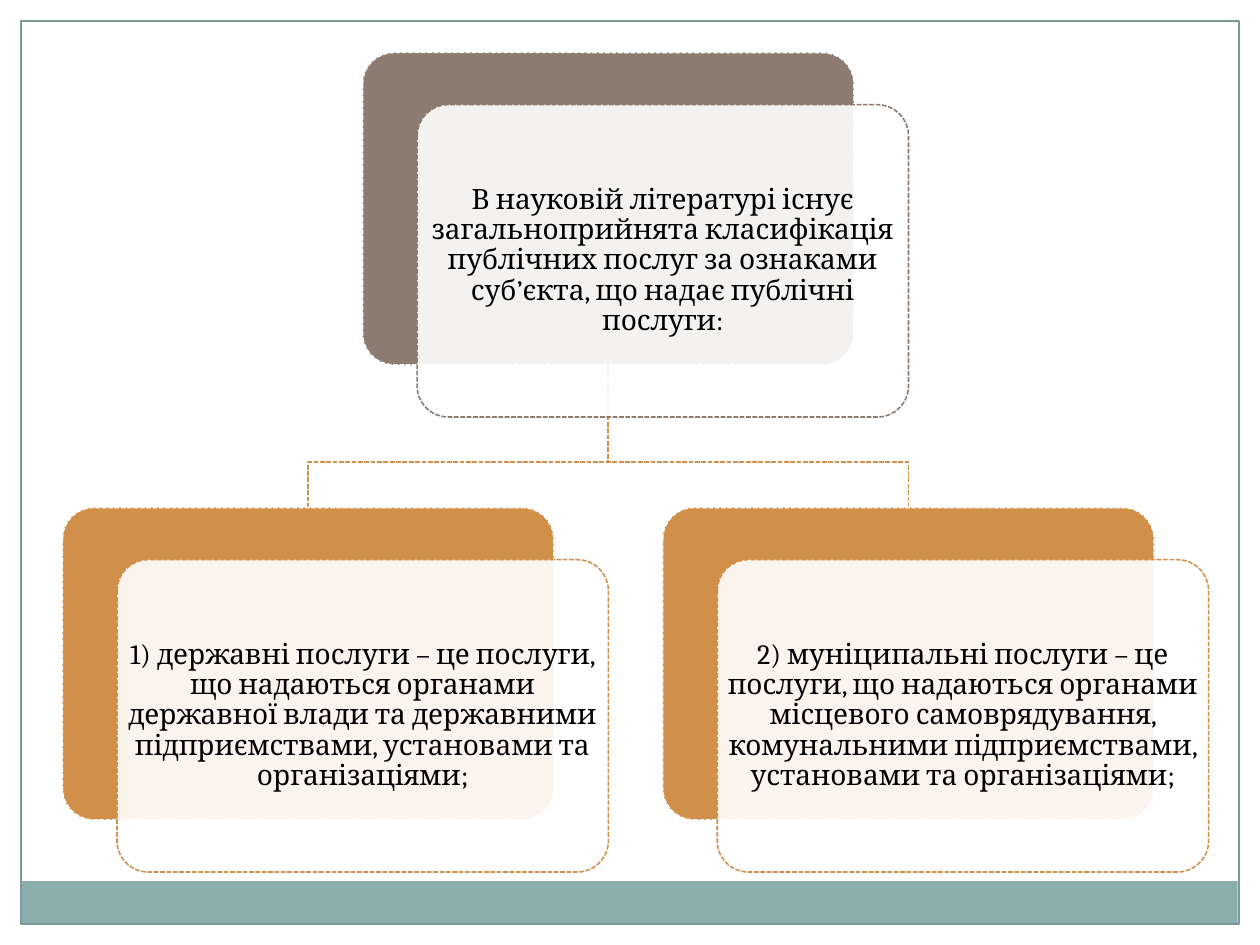
"""Build a slide with a two-branch classification of public services."""
from dataclasses import dataclass

from lxml import etree
from pptx import Presentation
from pptx import util as u
from pptx.dml.color import RGBColor
from pptx.enum import dml, shapes, text
from pptx.oxml.ns import qn


@dataclass(frozen=True)
class Theme:
    font: str = "Cambria"
    size: float = 16
    ink: str = "000000"
    white: str = "FFFFFF"
    band: str = "8CADAE"
    frame: str = "7C999A"
    root: str = "8C7B70"
    child: str = "D19049"
    frame_width: float = 0.75
    line_width: float = 0.9


class Deck:
    def __init__(self, prs, theme):
        self.theme = theme
        self.s = prs.slides.add_slide(prs.slide_layouts[6])

    def style(self, sp, fill=None, line=None, width=None, dashed=False):
        sp.shadow.inherit = False
        if fill:
            sp.fill.solid()
            sp.fill.fore_color.rgb = RGBColor.from_string(fill)
        else:
            sp.fill.background()
        if line:
            sp.line.color.rgb = RGBColor.from_string(line)
            sp.line.width = u.Pt(width or self.theme.line_width)
            if dashed:
                sp.line.dash_style = dml.MSO_LINE.SQUARE_DOT
        else:
            sp.line.fill.background()
        return sp

    def rect(self, x, y, w, h, **style):
        sp = self.s.shapes.add_shape(
            shapes.MSO_SHAPE.RECTANGLE, u.Pt(x), u.Pt(y), u.Pt(w), u.Pt(h))
        return self.style(sp, **style)

    def rounded(self, x, y, w, h, **style):
        sp = self.s.shapes.add_shape(
            shapes.MSO_SHAPE.ROUNDED_RECTANGLE, u.Pt(x), u.Pt(y), u.Pt(w), u.Pt(h))
        sp.adjustments[0] = 0.1
        return self.style(sp, dashed=True, **style)

    def branch(self, points, color):
        (x, y), *rest = [(u.Pt(px), u.Pt(py)) for px, py in points]
        fb = self.s.shapes.build_freeform(x, y)
        fb.add_line_segments(rest, close=False)
        return self.style(fb.convert_to_shape(), line=color, dashed=True)

    def card(self, x, y, w, h, shift, color, words):
        t = self.theme
        self.rounded(x, y, w, h, fill=color, line=t.white)
        sp = self.rounded(x + shift[0], y + shift[1], w, h, fill=t.white, line=color)
        clr = sp.fill._xPr.find(qn("a:solidFill"))[0]
        etree.SubElement(clr, qn("a:alpha"), val="90000")
        tf = sp.text_frame
        tf.word_wrap = True
        tf.vertical_anchor = text.MSO_ANCHOR.MIDDLE
        tf.margin_left = tf.margin_right = tf.margin_top = tf.margin_bottom = 0
        tf.text = words
        p = tf.paragraphs[0]
        p.alignment = text.PP_ALIGN.CENTER
        p.line_spacing = 0.9
        for r in p.runs:
            r.font.name = t.font
            r.font.size = u.Pt(t.size)
            r.font.color.rgb = RGBColor.from_string(t.ink)


def main():
    prs = Presentation()
    prs.slide_width, prs.slide_height = u.Pt(720), u.Pt(540)
    t = Theme()
    deck = Deck(prs, t)

    deck.rect(11.75, 503.5, 695.5, 24.5, fill=t.band)
    deck.rect(12, 12, 696, 516, line=t.frame, width=t.frame_width)

    w, h, shift = 280.8, 178.5, (31.2, 29.8)
    center, spread = 347.6, 171.5
    root_y, child_y, bend_y = 30, 290, 264.2
    root = "В науковій літературі існує загальноприйнята класифікація публічних послуг за ознаками суб’єкта, що надає публічні послуги:"
    children = [
        (center - spread, "1) державні послуги – це послуги, що надаються органами державної влади та державними підприємствами, установами та організаціями;"),
        (center + spread, "2) муніципальні послуги – це послуги, що надаються органами місцевого самоврядування, комунальними підприємствами, установами та організаціями;"),
    ]

    for x, _ in reversed(children):
        deck.branch([(center, root_y + h), (center, bend_y), (x, bend_y), (x, child_y)], t.child)
    deck.card(center - w / 2, root_y, w, h, shift, t.root, root)
    for x, words in children:
        deck.card(x - w / 2, child_y, w, h, shift, t.child, words)

    prs.save("out.pptx")


if __name__ == "__main__":
    main()
